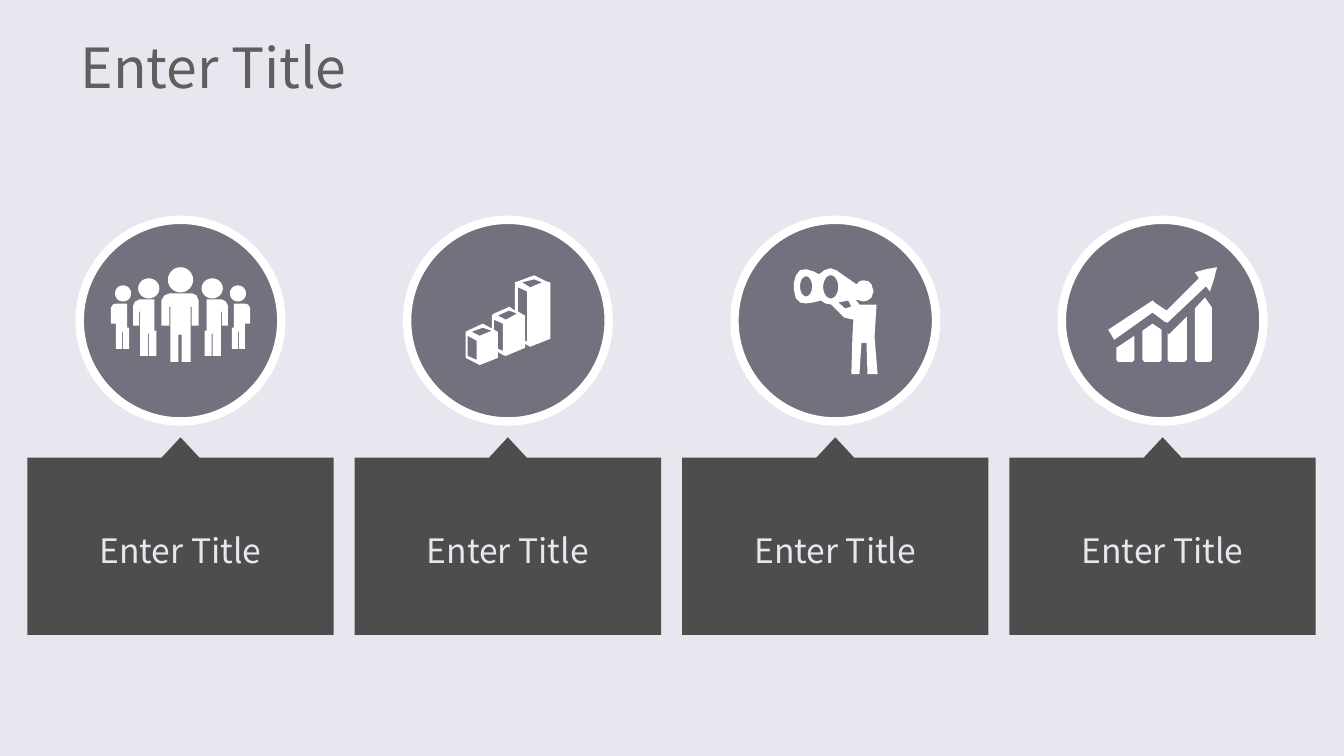
from math import cos, pi, sin

from pptx import Presentation
from pptx.dml.color import RGBColor
from pptx.enum.shapes import MSO_SHAPE
from pptx.enum.text import MSO_ANCHOR, MSO_AUTO_SIZE, PP_ALIGN
from pptx.util import Cm, Pt

OVAL = MSO_SHAPE.OVAL
RECTANGLE = MSO_SHAPE.RECTANGLE
TRIANGLE = MSO_SHAPE.ISOSCELES_TRIANGLE
MIDDLE = MSO_ANCHOR.MIDDLE
LEFT, CENTER = PP_ALIGN.LEFT, PP_ALIGN.CENTER
NO_AUTOFIT = MSO_AUTO_SIZE.NONE

FONT = "Noto Sans CJK JP"
PALE, WHITE, MAUVE, CHARCOAL, GREY = "E7E7EF", "FFFFFF", "74707E", "4D4D4D", "5F5F5F"

FIRST_CENTER, COLUMN_PITCH = 4.55, 8.25
BADGE_MIDDLE, BADGE_SIZE = 8.08, 5.08
PANEL_TOP, PANEL_WIDTH, PANEL_HEIGHT = 11.53, 7.72, 4.47
POINTER_TOP, POINTER_WIDTH, POINTER_HEIGHT = 11.02, 1.32, 0.71
ICON_UNIT = Cm(0.00254)


def oval(x, y, rx, ry, steps=32):
    angles = [2 * pi * step / steps for step in range(steps)]
    return [(x + rx * cos(a), y + ry * sin(a)) for a in angles]


def mirrored(outlines):
    return outlines + [[(-x, y) for x, y in outline] for outline in outlines]


def team_icon():
    leader = [
        (18, 5), (18, -20), (16, -25), (12, -27), (-11, -27), (-16, -25),
        (-19, -20), (-19, 5), (-11, 5), (-11, -14), (-10, -14), (-10, 41),
        (-2, 41), (-2, 14), (1, 14), (1, 41), (10, 41), (10, -14), (11, -14), (11, 5),
    ]
    inner = [
        (-24, 10), (-24, 35), (-31, 35), (-31, 13), (-32, 13), (-32, 35),
        (-40, 35), (-40, -9), (-41, -9), (-41, 5), (-47, 5), (-47, -15),
        (-45, -19), (-41, -21), (-26, -21), (-26, 10),
    ]
    outer = [
        (-51, 7), (-51, 28), (-57, 28), (-57, 11), (-58, 11), (-58, 28),
        (-64, 28), (-64, 3), (-69, 3), (-69, -13), (-67, -16), (-64, -17),
        (-53, -17), (-53, 7),
    ]
    followers = [inner, oval(-31.5, -32, 10.5, 10), outer, oval(-57, -27, 8, 8)]
    return [leader, oval(0, -40.5, 12.5, 12.5)] + mirrored(followers)


def blocks_icon():
    outline = [
        (-16, -5), (-14, -7), (0, -13), (1, -14), (7, -10), (7, -38), (10, -39),
        (26, -45), (38, -39), (42, -38), (42, 18), (22, 26), (17, 23), (17, 27),
        (-2, 35), (-5, 34), (-10, 31), (-10, 37), (-28, 44), (-42, 37),
        (-42, 11), (-40, 10), (-25, 3), (-12, 10), (-10, 11), (-10, 28),
        (-5, 30), (-5, 3), (-14, -1), (-14, 9), (-16, 8),
    ]
    tall_top = [(14, -38), (22, -33), (34, -38), (26, -41)]
    middle_top = [(-10, -5), (-2, -1), (9, -7), (1, -10)]
    short_top = [(-36, 11), (-28, 15), (-16, 10), (-25, 7)]
    short_side = [(-31, 20), (-40, 15), (-40, 35), (-31, 39)]
    tall_side = [(10, -9), (17, -5), (17, 20), (19, 21), (19, -29), (10, -33)]
    return [outline, tall_top, middle_top, short_top, short_side, tall_side]


def lookout_icon():
    person = [
        (-5, -52), (-11, -50), (-16, -46), (-22, -49), (-29, -51), (-35, -50),
        (-39, -45), (-41, -38), (-41, -30), (-39, -22), (-35, -18), (-29, -17),
        (-22, -18), (-14, -20), (-10, -17), (-4, -16), (9, -3), (18, -1),
        (17, 16), (16, 53), (24, 53), (26, 22), (31, 22), (32, 53), (42, 53),
        (39, 16), (41, -16), (24, -16), (20, -21), (24, -20), (28, -19),
        (32, -20), (36, -23), (38, -29), (36, -36), (33, -39), (28, -40),
        (24, -39), (21, -36), (1, -50),
    ]
    arm_gap = [(16, -14), (10, -12), (3, -18), (13, -20)]
    return [person, arm_gap, oval(-29, -34, 6, 10), oval(-4.5, -33.5, 7.5, 11.5)]


def bar(left, right, top):
    return top + [(right, 39), (right - 2, 41), (left + 2, 41), (left, 39)]


def growth_icon():
    arrow = [
        (-54, 9), (-13, -18), (-10, -20), (-8, -18), (4, -10), (36, -42),
        (32, -48), (43, -51), (54, -53), (51, -41), (47, -29), (43, -34),
        (7, 0), (5, 2), (2, 1), (-10, -8), (-48, 19),
    ]
    return [
        arrow,
        bar(-46, -28, [(-46, 27), (-28, 15)]),
        bar(-20, -1, [(-20, 10), (-10, 3), (-1, 9)]),
        bar(5, 24, [(5, 12), (6, 14), (24, -4)]),
        bar(32, 49, [(32, -12), (42, -23), (49, -13)]),
    ]


def rgb(color):
    return RGBColor.from_string(color)


def paint(shape, fill):
    shape.shadow.inherit = False
    shape.fill.solid()
    shape.fill.fore_color.rgb = rgb(fill)
    shape.line.fill.background()


def write(frame, text, size, color, align):
    frame.word_wrap = True
    frame.vertical_anchor = MIDDLE
    frame.text = text
    paragraph = frame.paragraphs[0]
    paragraph.alignment = align
    font = paragraph.runs[0].font
    font.name = FONT
    font.size = Pt(size)
    font.color.rgb = rgb(color)
    return paragraph


def add_centered(slide, kind, center, top, width, height, fill):
    shape = slide.shapes.add_shape(
        kind, Cm(center - width / 2), Cm(top), Cm(width), Cm(height))
    paint(shape, fill)
    return shape


def add_icon(slide, outlines, center):
    scaled = [[(10 * x, 10 * y) for x, y in outline] for outline in outlines]
    builder = slide.shapes.build_freeform(*scaled[0][0], scale=ICON_UNIT)
    for index, outline in enumerate(scaled):
        if index:
            builder.move_to(*outline[0])
        builder.add_line_segments(outline[1:], close=True)
    paint(builder.convert_to_shape(Cm(center), Cm(BADGE_MIDDLE)), WHITE)


def add_column(slide, center, caption, outlines):
    badge = add_centered(slide, OVAL, center, BADGE_MIDDLE - BADGE_SIZE / 2,
                         BADGE_SIZE, BADGE_SIZE, MAUVE)
    badge.line.color.rgb = rgb(WHITE)
    badge.line.width = Pt(6)
    panel = add_centered(slide, RECTANGLE, center, PANEL_TOP,
                         PANEL_WIDTH, PANEL_HEIGHT, CHARCOAL)
    write(panel.text_frame, caption, 24, PALE, CENTER).line_spacing = 1.2
    add_centered(slide, TRIANGLE, center, POINTER_TOP,
                 POINTER_WIDTH, POINTER_HEIGHT, CHARCOAL)
    add_icon(slide, outlines, center)


def set_title(slide, text):
    title = slide.shapes.title
    title.left, title.top = Cm(1.7), Cm(0.76)
    title.width, title.height = Cm(30.48), Cm(1.83)
    frame = title.text_frame
    frame.auto_size = NO_AUTOFIT
    frame.margin_left = frame.margin_right = Cm(0.33)
    frame.margin_top = frame.margin_bottom = Cm(0.18)
    write(frame, text, 39.5, GREY, LEFT)


def main():
    deck = Presentation()
    deck.slide_width, deck.slide_height = Cm(33.87), Cm(19.05)
    slide = deck.slides.add_slide(deck.slide_layouts[5])
    slide.background.fill.solid()
    slide.background.fill.fore_color.rgb = rgb(PALE)
    set_title(slide, "Enter Title")
    icons = [team_icon(), blocks_icon(), lookout_icon(), growth_icon()]
    for index, outlines in enumerate(icons):
        add_column(slide, FIRST_CENTER + index * COLUMN_PITCH, "Enter Title", outlines)
    deck.save("out.pptx")


if __name__ == "__main__":
    main()
